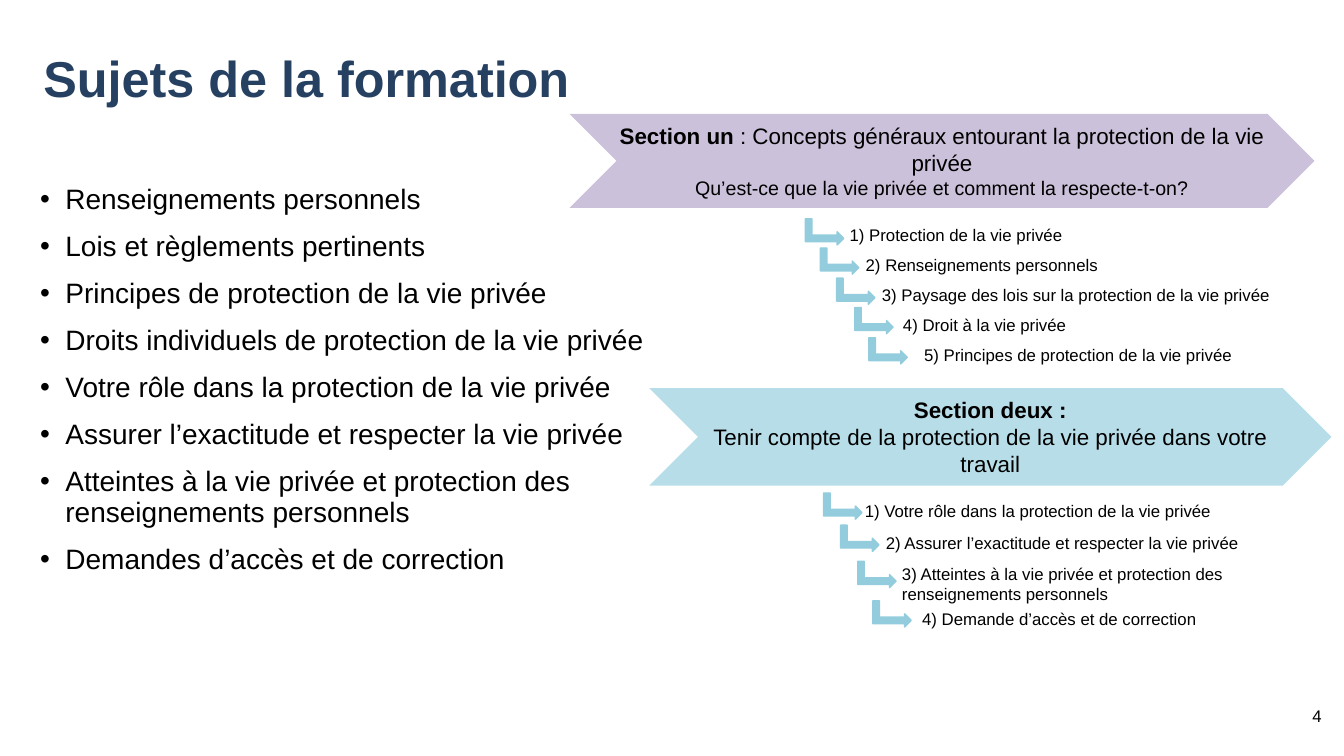
"""Build the slide that lists the training topics in two sections."""
from pptx import Presentation
from pptx.dml.color import RGBColor
from pptx.enum.shapes import MSO_SHAPE as Shape
from pptx.enum.text import MSO_ANCHOR as Anchor, MSO_AUTO_SIZE as Fit, PP_ALIGN as Align
from pptx.util import Pt
from lxml.etree import SubElement

NAVY = RGBColor(0x25, 0x40, 0x61)
BLACK = RGBColor(0, 0, 0)
LILAC = RGBColor(0xCC, 0xC1, 0xDA)
AQUA = RGBColor(0xB7, 0xDE, 0xE8)
TEAL = RGBColor(0x93, 0xCD, 0xDD)
FONT = "Arial"


def style(item, size, bold=False, color=BLACK):
    font = item.font
    font.name, font.size, font.bold = FONT, Pt(size), bold
    font.color.rgb = color


def add_text(x, y, w, h, text, size):
    frame = slide.shapes.add_textbox(Pt(x), Pt(y), Pt(w), Pt(h)).text_frame
    frame.word_wrap = True
    frame.text = text
    for para in frame.paragraphs:
        for run in para.runs:
            style(run, size)
    return frame


deck = Presentation()
deck.slide_width, deck.slide_height = Pt(960), Pt(540)
slide = deck.slides.add_slide(deck.slide_layouts[5])

title = slide.shapes.title
title.left, title.top, title.width, title.height = Pt(23.8), Pt(5.8), Pt(686.9), Pt(104.4)
head = title.text_frame
head.text = "Sujets de la formation"
head.auto_size = Fit.NONE
head.vertical_anchor = Anchor.MIDDLE
head.paragraphs[0].alignment = Align.LEFT
head.paragraphs[0].line_spacing = 0.9
style(head.paragraphs[0].runs[0], 36, True, NAVY)

topics = [
    "Renseignements personnels",
    "Lois et règlements pertinents",
    "Principes de protection de la vie privée",
    "Droits individuels de protection de la vie privée",
    "Votre rôle dans la protection de la vie privée",
    "Assurer l’exactitude et respecter la vie privée",
    "Atteintes à la vie privée et protection des renseignements personnels",
    "Demandes d’accès et de correction",
]
body = add_text(21.6, 128.9, 496.1, 342.7, "\n".join(topics), 20)
for i, para in enumerate(body.paragraphs):
    para.line_spacing = 0.9
    para.space_before = Pt(6 if i else 0)
    para.space_after = Pt(6)
    props = para._p.get_or_add_pPr()
    props.set("marL", str(Pt(18)))
    props.set("indent", str(-Pt(18)))
    space = props.tag.split("}")[0] + "}"
    SubElement(props, space + "buFont", typeface=FONT)
    SubElement(props, space + "buChar", char="•")

sections = [
    (406.8, 81.4, 532.1, 67, LILAC, [
        [("Section un ", 16, True),
         (": Concepts généraux entourant la protection de la vie privée", 16, False)],
        [("Qu’est-ce que la vie privée et comment la respecte-t-on?", 14, False)],
    ], [
        (579.6, 151.9, 599.8, 157, 218.2, "1) Protection de la vie privée"),
        (590.4, 172.8, 611.3, 178.5, 218.2, "2) Renseignements personnels"),
        (601.9, 194.4, 622.8, 199.8, 300.2,
         "3) Paysage des lois sur la protection de la vie privée"),
        (614.9, 215.3, 637.9, 221.2, 218.2, "4) Droit à la vie privée"),
        (625, 236.9, 653, 242.6, 260.6, "5) Principes de protection de la vie privée"),
    ]),
    (463.7, 277.2, 487.4, 69.8, AQUA, [
        [("Section deux :", 16, True)],
        [("Tenir compte de la protection de la vie privée dans votre travail", 16, False)],
    ], [
        (592.6, 347.8, 610.6, 354.2, 267.8,
         "1) Votre rôle dans la protection de la vie privée"),
        (604.8, 370.8, 625.7, 377.3, 268.6,
         "2) Assurer l’exactitude et respecter la vie privée"),
        (617, 396.7, 637.2, 398.9, 328.3,
         "3) Atteintes à la vie privée et protection des renseignements personnels"),
        (627.8, 424.8, 651.6, 431.3, 227.5, "4) Demande d’accès et de correction"),
    ]),
]
for x, y, w, h, color, lines, steps in sections:
    banner = slide.shapes.add_shape(Shape.CHEVRON, Pt(x), Pt(y), Pt(w), Pt(h))
    banner.shadow.inherit = False
    banner.fill.solid()
    banner.fill.fore_color.rgb = color
    banner.line.fill.background()
    frame = banner.text_frame
    frame.word_wrap = True
    frame.vertical_anchor = Anchor.MIDDLE
    frame.margin_left = frame.margin_right = Pt(0)
    frame.margin_top = frame.margin_bottom = Pt(5.8)
    for i, parts in enumerate(lines):
        para = frame.add_paragraph() if i else frame.paragraphs[0]
        para.alignment = Align.CENTER
        for text, size, bold in parts:
            run = para.add_run()
            run.text = text
            style(run, size, bold)

    for left, top, tab, base, wide, text in steps:
        arrow = slide.shapes.add_shape(
            Shape.BENT_UP_ARROW, Pt(left), Pt(top), Pt(18.7), Pt(27.4))
        arrow.rotation = 90
        arrow.shadow.inherit = False
        arrow.fill.solid()
        arrow.fill.fore_color.rgb = TEAL
        arrow.line.color.rgb = TEAL
        arrow.line.width = Pt(1)
        add_text(tab, base, wide, 21.6, text, 12)

number = add_text(735.1, 496.8, 216, 28.8, "4", 12)
number.vertical_anchor = Anchor.MIDDLE
number.paragraphs[0].alignment = Align.RIGHT

deck.save("out.pptx")
